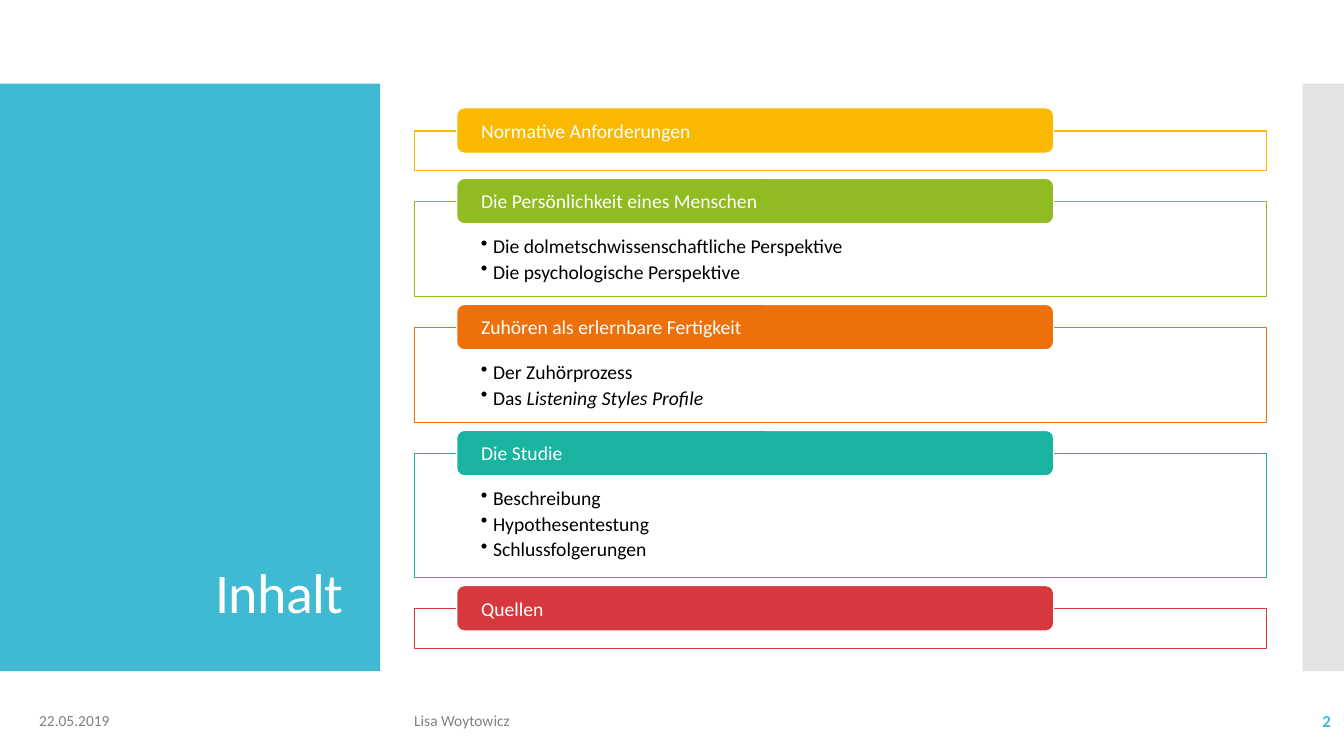
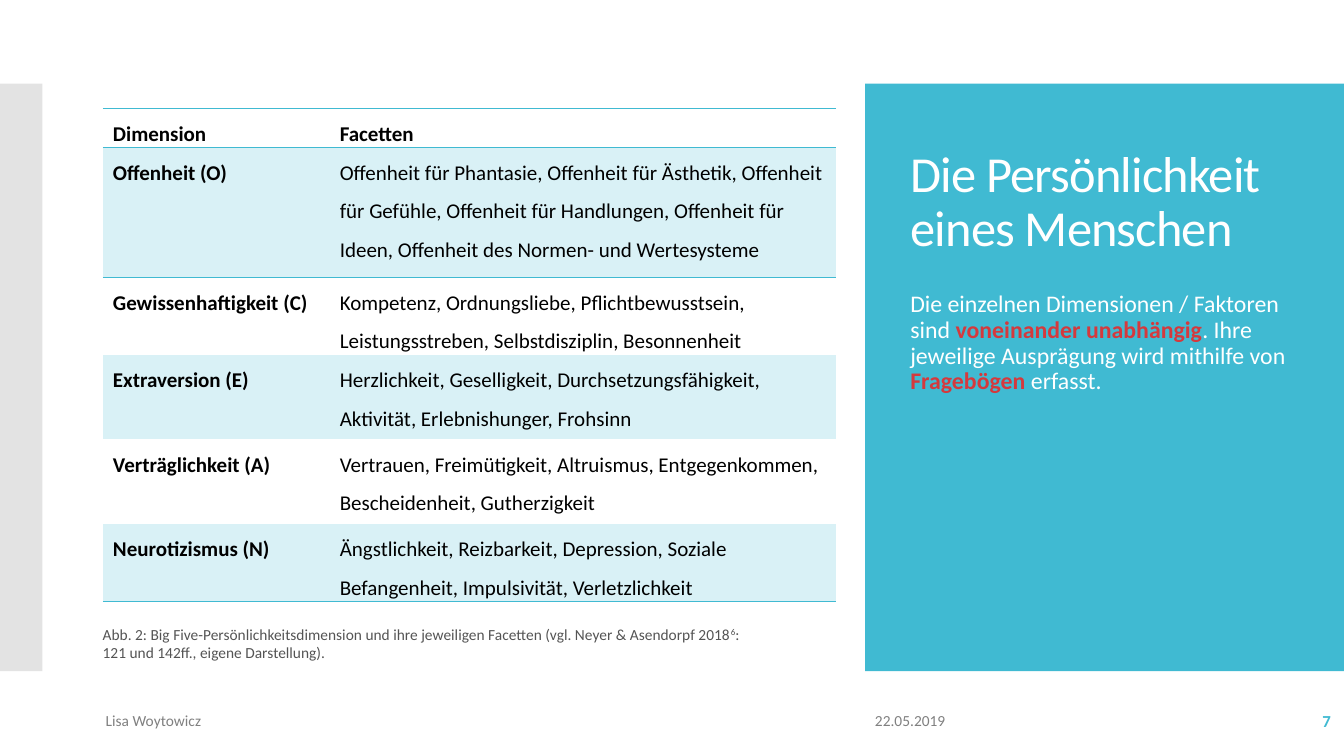
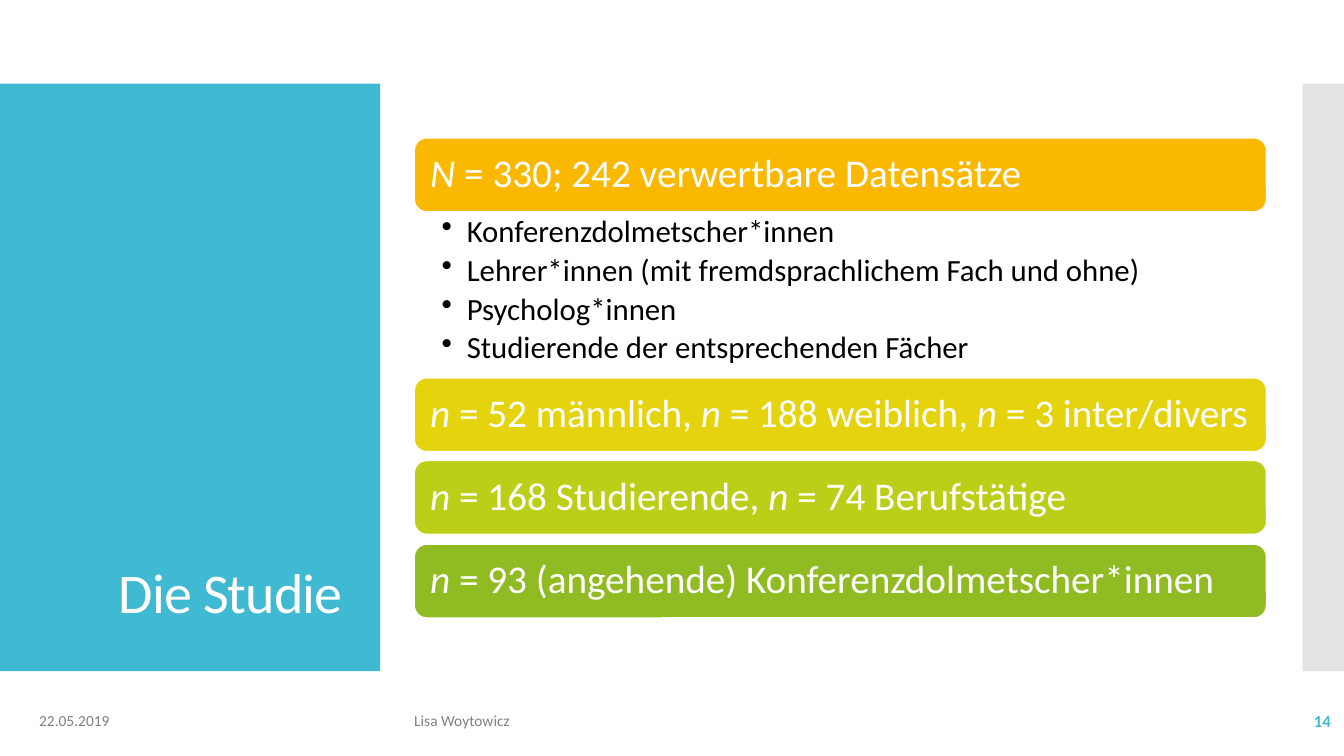
from lxml import etree
from pptx import Presentation
from pptx.dml.color import RGBColor
from pptx.enum.shapes import MSO_SHAPE
from pptx.enum.text import MSO_ANCHOR, MSO_AUTO_SIZE, PP_ALIGN
from pptx.oxml.ns import qn
from pptx.util import Inches, Pt

RECT, ROUNDED = MSO_SHAPE.RECTANGLE, MSO_SHAPE.ROUNDED_RECTANGLE
TOP, MIDDLE, BOTTOM = MSO_ANCHOR.TOP, MSO_ANCHOR.MIDDLE, MSO_ANCHOR.BOTTOM
LEFT, RIGHT = PP_ALIGN.LEFT, PP_ALIGN.RIGHT
FONT = "Calibri"
NO_TABLE_STYLE = "{2D5ABB26-0587-4C30-8999-92F81FD0307C}"
COLORS = {
    "accent": "40BAD2", "band": "D9F1F6", "side": "E3E3E3",
    "white": "FFFFFF", "black": "000000", "footer": "808080",
    "caption": "545454", "amber": "FAB900", "yellow": "E4D30D",
    "lime": "BCCF18", "green": "90BB23", "orange": "EE7008",
    "teal": "1AB39F", "red": "D5393D",
}


def add_box(slide, at, fill=None, line=None, kind=RECT):
    """Add a filled shape, or a plain text box when there is no fill."""
    place = [Inches(length) for length in at]
    if fill is None:
        return slide.shapes.add_textbox(*place)
    box = slide.shapes.add_shape(kind, *place)
    box.shadow.inherit = False
    box.fill.solid()
    box.fill.fore_color.rgb = RGBColor.from_string(COLORS[fill])
    if line:
        box.line.color.rgb = RGBColor.from_string(COLORS[line])
        box.line.width = Pt(0.85)
    else:
        box.line.fill.background()
    return box


def write(frame, lines, size, color, align=LEFT, anchor=TOP, margins=(0.1, 0.05, 0.1, 0.05),
          spacing=1.0, after=0, bullet=0):
    """Write one paragraph per line; return the runs set between | marks.

    bullet is the hanging indent in inches, 0 for no bullet.
    """
    frame.word_wrap = True
    frame.auto_size = MSO_AUTO_SIZE.NONE
    frame.vertical_anchor = anchor
    (frame.margin_left, frame.margin_top,
     frame.margin_right, frame.margin_bottom) = [Inches(m) for m in margins]
    marked = []
    for index, line in enumerate(lines):
        para = frame.add_paragraph() if index else frame.paragraphs[0]
        para.alignment = align
        para.line_spacing = spacing
        para.space_after = Pt(after)
        if bullet:
            properties = para._p.get_or_add_pPr()
            properties.set("marL", str(Inches(bullet)))
            properties.set("indent", str(-Inches(bullet)))
            etree.SubElement(properties, qn("a:buChar")).set("char", "•")
        for part, text in enumerate(line.split("|")):
            if not text:
                continue
            span = para.add_run()
            span.text = text
            span.font.name = FONT
            span.font.size = Pt(size)
            span.font.color.rgb = RGBColor.from_string(COLORS[color])
            if part % 2:
                marked.append(span)
    return marked


deck = Presentation()
deck.slide_width, deck.slide_height = Inches(13.33), Inches(7.5)

# Shared frame: accent panel, side band, title and footer
LAYOUTS = {
    "panel left": {
        "panel": (0, 0.83, 3.77, 5.83), "side": (12.92, 0.83, 0.42, 5.83),
        "title": (0.28, 1.23, 3.22, 5.03), "text": (40, "white", RIGHT, BOTTOM),
        "date": (0.29, 6.95, 3, 0.4), "author": (4.01, 6.95, 6.69, 0.4),
    },
    "panel right": {
        "panel": (8.58, 0.83, 4.75, 5.83), "side": (0, 0.83, 0.42, 5.83),
        "title": (8.93, 1.18, 4, 1.67), "text": (36, "white", LEFT, MIDDLE),
        "date": (8.58, 6.95, 2.13, 0.4), "author": (0.95, 6.95, 6.46, 0.4),
    },
}
pages = []
for heading, number, layout_name in [
    ("Inhalt", "2", "panel left"),
    ("Die Persönlichkeit eines Menschen", "7", "panel right"),
    ("Die Studie", "14", "panel left"),
]:
    layout = LAYOUTS[layout_name]
    page = deck.slides.add_slide(deck.slide_layouts[5])
    add_box(page, layout["panel"], "accent")
    side = add_box(page, layout["side"], "side")

    title = page.shapes.title
    side.element.addnext(title.element)  # keeps the title in front of the panel
    title.left, title.top, title.width, title.height = [Inches(n) for n in layout["title"]]
    write(title.text_frame, [heading], *layout["text"], spacing=0.9)
    title.text_frame.paragraphs[0].runs[0].font._element.set("spc", "-60")

    for name, text in [("date", "22.05.2019"), ("author", "Lisa Woytowicz")]:
        write(add_box(page, layout[name]).text_frame, [text], 11, "footer", anchor=MIDDLE)
    number_box = add_box(page, (11.63, 6.95, 1.67, 0.4))
    for span in write(number_box.text_frame, [f"|{number}|"], 12, "accent", RIGHT, MIDDLE):
        span.font.bold = True
    pages.append(page)
contents, personality, study = pages

# Contents: one outlined panel per chapter with a heading bar on its top edge
top = 1.3
for heading, color, height, points in [
    ("Normative Anforderungen", "amber", 0.39, []),
    ("Die Persönlichkeit eines Menschen", "green", 0.94,
     ["Die dolmetschwissenschaftliche Perspektive", "Die psychologische Perspektive"]),
    ("Zuhören als erlernbare Fertigkeit", "orange", 0.94,
     ["Der Zuhörprozess", "Das |Listening Styles Profile|"]),
    ("Die Studie", "teal", 1.23,
     ["Beschreibung", "Hypothesentestung", "Schlussfolgerungen"]),
    ("Quellen", "red", 0.39, []),
]:
    panel = add_box(contents, (4.11, top, 8.45, height), "white", color)
    for span in write(panel.text_frame, points, 14, "black",
                      margins=(0.66, 0.32, 0.66, 0.11), after=1.5, bullet=0.12):
        span.font.italic = True
    bar = add_box(contents, (4.53, top - 0.23, 5.92, 0.45), color, "white", ROUNDED)
    write(bar.text_frame, [heading], 14, "white", anchor=MIDDLE, margins=(0.22, 0, 0.22, 0))
    top += height + 0.31

# Personality: table of dimensions, caption and comment
ROWS = [
    ("Dimension", "|Facetten|", 0.3),
    ("Offenheit (O)",
     "Offenheit für Phantasie, Offenheit für Ästhetik, Offenheit für Gefühle, Offenheit für "
     "Handlungen, Offenheit für Ideen, Offenheit des Normen- und Wertesysteme", 1.29),
    ("Gewissenhaftigkeit (C)",
     "Kompetenz, Ordnungsliebe, Pflichtbewusstsein, Leistungsstreben, Selbstdisziplin, "
     "Besonnenheit", 0.63),
    ("Extraversion (E)",
     "Herzlichkeit, Geselligkeit, Durchsetzungsfähigkeit, Aktivität, Erlebnishunger, "
     "Frohsinn", 0.84),
    ("Verträglichkeit (A)",
     "Vertrauen, Freimütigkeit, Altruismus, Entgegenkommen, Bescheidenheit, "
     "Gutherzigkeit", 0.84),
    ("Neurotizismus (N)",
     "Ängstlichkeit, Reizbarkeit, Depression, Soziale Befangenheit, Impulsivität, "
     "Verletzlichkeit", 0.63),
]
BORDERS = {0: ["a:lnT", "a:lnB"], 1: ["a:lnT"], len(ROWS) - 1: ["a:lnB"]}
table_frame = personality.shapes.add_table(
    len(ROWS), 2, Inches(1.02), Inches(1.08), Inches(7.27), Inches(4.53))
for style in table_frame.element.iter(qn("a:tableStyleId")):
    style.text = NO_TABLE_STYLE
table = table_frame.table
table.columns[0].width, table.columns[1].width = Inches(2.25), Inches(5.02)
for row, (dimension, facets, height) in enumerate(ROWS):
    table.rows[row].height = Inches(height)
    for column, text in enumerate([f"|{dimension}|", facets]):
        cell = table.cell(row, column)
        for span in write(cell.text_frame, [text], 15, "black", spacing=1.5):
            span.font.bold = True
        cell.margin_left = cell.margin_right = Inches(0.1)
        cell.margin_top = cell.margin_bottom = 0
        cell.vertical_anchor = TOP
        properties = cell._tc.get_or_add_tcPr()
        for edge in BORDERS.get(row, []):
            border = etree.SubElement(properties, qn(edge), w=str(Pt(1)))
            paint = etree.SubElement(border, qn("a:solidFill"))
            etree.SubElement(paint, qn("a:srgbClr"), val=COLORS["accent"])
        if row % 2:
            cell.fill.solid()
            cell.fill.fore_color.rgb = RGBColor.from_string(COLORS["band"])
        else:
            cell.fill.background()

caption = add_box(personality, (0.92, 6.15, 6.67, 0.47))
for span in write(caption.text_frame, [
        "Abb. 2: Big Five-Persönlichkeitsdimension und ihre jeweiligen Facetten "
        "(vgl. Neyer & Asendorpf 2018|6|: 121 und 142ff., eigene Darstellung)."], 11, "caption"):
    span.font._element.set("baseline", "30000")

comment = add_box(personality, (8.93, 2.85, 4.11, 3.45))
for span in write(comment.text_frame, [
        "Die einzelnen Dimensionen / Faktoren sind |voneinander unabhängig|. Ihre jeweilige "
        "Ausprägung wird mithilfe von |Fragebögen| erfasst."], 17, "white", spacing=0.9):
    span.font.bold = True
    span.font.color.rgb = RGBColor.from_string(COLORS["red"])

# Study: sample bars, the first one followed by its groups
for top, color, text in [
    (1.37, "amber", "|N |= 330; 242 verwertbare Datensätze"),
    (3.75, "yellow", "|n |= 52 männlich, |n |= 188 weiblich, |n |= 3 inter/divers"),
    (4.57, "lime", "|n |= 168 Studierende, |n |= 74 Berufstätige"),
    (5.4, "green", "|n |= 93 (angehende) Konferenzdolmetscher*innen"),
]:
    bar = add_box(study, (4.11, top, 8.45, 0.73), color, "white", ROUNDED)
    for span in write(bar.text_frame, [text], 28, "white", anchor=MIDDLE,
                      margins=(0.12, 0.12, 0.12, 0.12), spacing=0.9):
        span.font.italic = True
groups = add_box(study, (4.11, 2.1, 8.45, 1.65))
write(groups.text_frame, [
    "Konferenzdolmetscher*innen",
    "Lehrer*innen (mit fremdsprachlichem Fach und ohne)",
    "Psycholog*innen",
    "Studierende der entsprechenden Fächer",
], 22, "black", margins=(0.27, 0.04, 0.22, 0.04), spacing=0.9, after=4, bullet=0.25)

deck.save("out.pptx")
